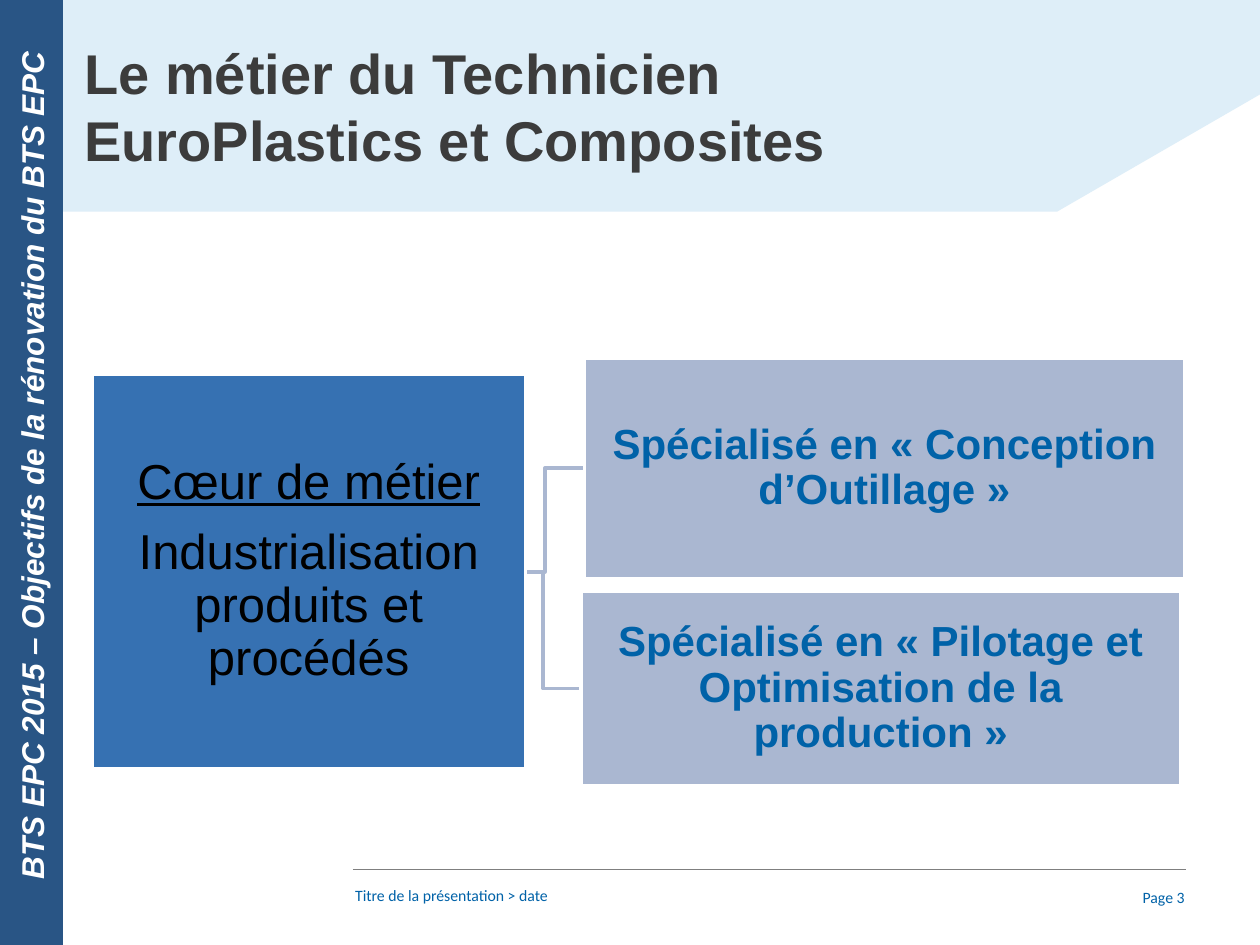
from pptx import Presentation
from pptx.dml.color import RGBColor
from pptx.enum.shapes import MSO_CONNECTOR, MSO_SHAPE
from pptx.enum.text import MSO_ANCHOR, PP_ALIGN
from pptx.oxml.ns import qn
from pptx.util import Inches, Pt
from lxml import etree

WHITE = RGBColor(0xFF, 0xFF, 0xFF)
BLACK = RGBColor(0x00, 0x00, 0x00)
PALE_BLUE = RGBColor(0xDE, 0xEE, 0xF8)
DARK_BLUE = RGBColor(0x29, 0x55, 0x85)
CORE_BLUE = RGBColor(0x36, 0x71, 0xB2)
SPECIALTY_BLUE = RGBColor(0xAA, 0xB7, 0xD1)
TEXT_BLUE = RGBColor(0x00, 0x62, 0xA8)
TITLE_GRAY = RGBColor(0x3C, 0x3C, 0x3C)
RULE_GRAY = RGBColor(0x7F, 0x7F, 0x7F)


def set_font(paragraph, size, color, name="Arial", bold=False, italic=False):
    font = paragraph.font
    font.name, font.size, font.bold, font.italic = name, Pt(size), bold, italic
    font.color.rgb = color


def set_margins(frame, inches):
    frame.margin_left = frame.margin_right = Inches(inches)
    frame.margin_top = frame.margin_bottom = Inches(inches)


def add_path(slide, points, closed):
    start, *others = [(Inches(x), Inches(y)) for x, y in points]
    builder = slide.shapes.build_freeform(*start)
    builder.add_line_segments(others, close=closed)
    shape = builder.convert_to_shape()
    shape.shadow.inherit = False
    return shape


def add_banner(slide):
    banner = add_path(slide, [(0, 0), (10, 0), (10, 0.75), (8.39, 1.68), (0, 1.68)], True)
    banner.fill.solid()
    banner.fill.fore_color.rgb = PALE_BLUE
    banner.line.fill.background()


def add_branch(slide, start, end):
    (x1, y1), (x2, y2) = start, end
    middle = (x1 + x2) / 2
    branch = add_path(slide, [start, (middle, y1), (middle, y2), end], False)
    branch.fill.background()
    branch.line.color.rgb = SPECIALTY_BLUE
    branch.line.width = Pt(2)


def add_rectangle(slide, position, color):
    shape = slide.shapes.add_shape(MSO_SHAPE.RECTANGLE, *map(Inches, position))
    shape.shadow.inherit = False
    shape.fill.solid()
    shape.fill.fore_color.rgb = color
    return shape


def add_box(slide, position, fill, lines, size, color, bold=False):
    box = add_rectangle(slide, position, fill)
    box.line.color.rgb = WHITE
    box.line.width = Pt(2)
    frame = box.text_frame
    frame.word_wrap = True
    frame.vertical_anchor = MSO_ANCHOR.MIDDLE
    set_margins(frame, 0.02)
    frame.text = "\n".join(lines)
    for paragraph in frame.paragraphs:
        paragraph.alignment = PP_ALIGN.CENTER
        paragraph.line_spacing = 0.9
        paragraph.space_after = Pt(round(size * 0.35))
        set_font(paragraph, size, color, bold=bold)
    return box


def add_text(slide, position, text, size, color, name="Arial", bold=False,
             align=PP_ALIGN.LEFT, anchor=MSO_ANCHOR.TOP):
    frame = slide.shapes.add_textbox(*map(Inches, position)).text_frame
    frame.word_wrap = True
    frame.vertical_anchor = anchor
    paragraph = frame.paragraphs[0]
    paragraph.text = text
    paragraph.alignment = align
    set_font(paragraph, size, color, name, bold)
    return frame


def add_rule(slide, x1, x2, y):
    rule = slide.shapes.add_connector(
        MSO_CONNECTOR.STRAIGHT, Inches(x1), Inches(y), Inches(x2), Inches(y))
    rule.line.color.rgb = RULE_GRAY
    rule.line.width = Pt(0.5)
    etree.SubElement(rule._element.spPr, qn("a:effectLst"))


def add_side_bar(slide, text):
    bar = add_rectangle(slide, (0, 0, 0.5, 7.5), DARK_BLUE)
    bar.line.fill.background()
    frame = bar.text_frame
    frame._txBody.bodyPr.set("vert", "vert270")
    frame.vertical_anchor = MSO_ANCHOR.MIDDLE
    frame.word_wrap = True
    paragraph = frame.paragraphs[0]
    paragraph.text = text
    paragraph.alignment = PP_ALIGN.LEFT
    paragraph._p.get_or_add_pPr().set("marL", str(Inches(0.42)))
    set_font(paragraph, 18, WHITE, bold=True, italic=True)


def main():
    presentation = Presentation()
    presentation.slide_width, presentation.slide_height = Inches(10), Inches(7.5)
    slide = presentation.slides.add_slide(presentation.slide_layouts[6])

    # Banner and title
    add_banner(slide)
    title = add_text(slide, (0.67, 0.21, 9, 1.25),
                     "Le métier du Technicien \vEuroPlastics et Composites",
                     32, TITLE_GRAY, bold=True, anchor=MSO_ANCHOR.MIDDLE)
    set_margins(title, 0)

    # Footer
    add_text(slide, (2.72, 6.98, 5.91, 0.25), "Titre de la présentation > date",
             9, TEXT_BLUE, "Calibri")
    add_rule(slide, 2.8, 9.41, 6.9)
    add_text(slide, (8.62, 6.95, 0.88, 0.34), "Page 3", 9, TEXT_BLUE, "Calibri",
             align=PP_ALIGN.RIGHT, anchor=MSO_ANCHOR.MIDDLE)

    # Core trade and its two specialties
    specialties = [
        ((4.64, 2.84, 4.76, 1.75), "Spécialisé en « Conception d’Outillage »"),
        ((4.61, 4.69, 4.76, 1.55),
         "Spécialisé en « Pilotage et Optimisation de la production »"),
    ]
    for (left, top, _, height), _ in specialties:
        add_branch(slide, (4.01, 4.54), (left, top + height / 2))
    core = add_box(slide, (0.73, 2.97, 3.44, 3.13), CORE_BLUE,
                   ["Cœur de métier", "Industrialisation produits et procédés"], 28, BLACK)
    core.text_frame.paragraphs[0].font.underline = True
    for position, text in specialties:
        add_box(slide, position, SPECIALTY_BLUE, [text], 24, TEXT_BLUE, bold=True)

    # Vertical side bar
    add_side_bar(slide, "BTS EPC 2015 – Objectifs de la rénovation du BTS EPC")

    presentation.save("out.pptx")


if __name__ == "__main__":
    main()
